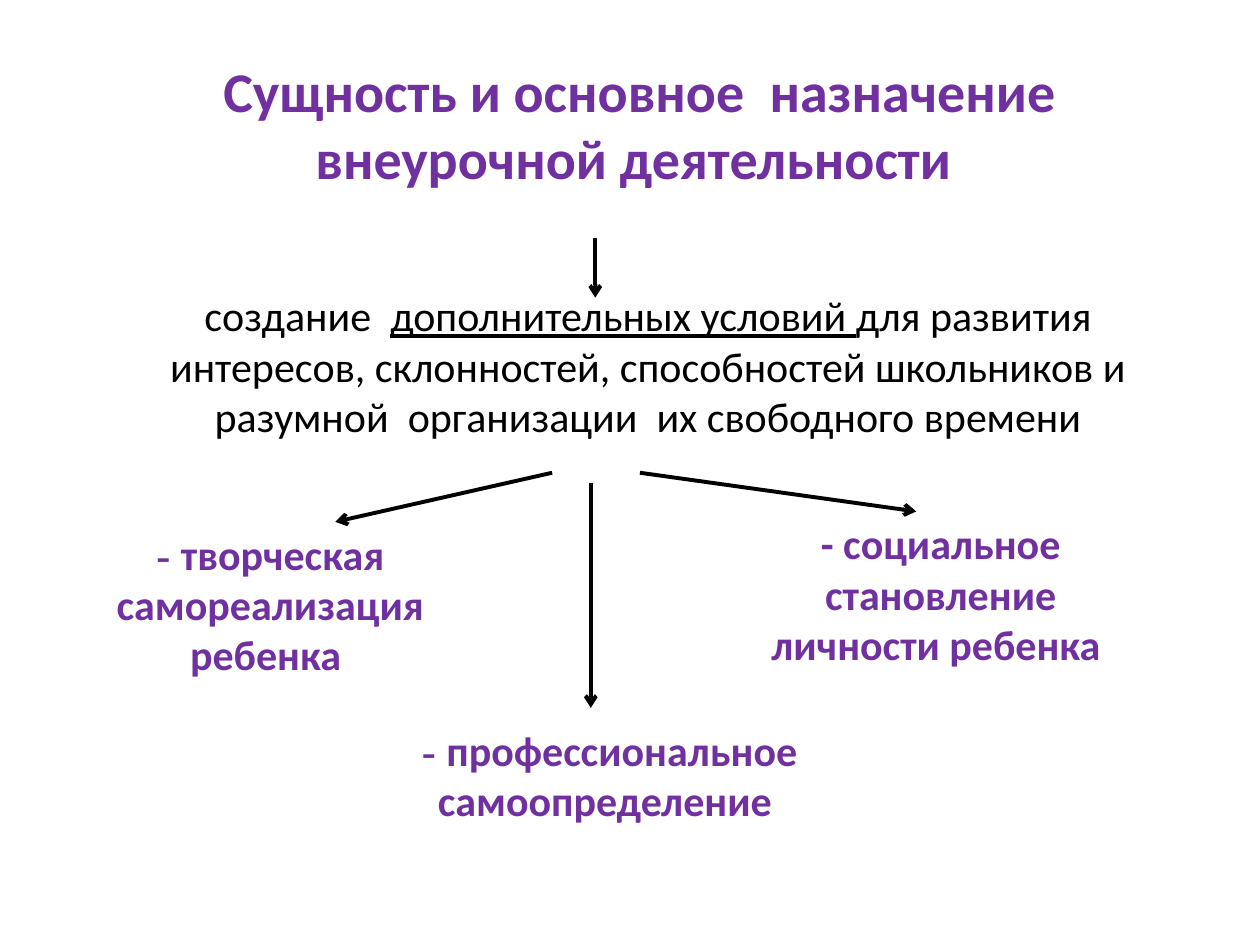
from lxml.etree import SubElement
from pptx import Presentation
from pptx.dml.color import RGBColor
from pptx.enum.shapes import MSO_CONNECTOR
from pptx.enum.text import MSO_ANCHOR, PP_ALIGN
from pptx.oxml.ns import qn
from pptx.util import Cm, Pt

PURPLE = RGBColor(0x70, 0x30, 0xA0)
BLACK = RGBColor(0, 0, 0)


def add_run(p, text, size, color, bold=False, underline=False, font="Calibri"):
    r = p.add_run()
    r.text = text
    r.font.name = font
    r.font.size = Pt(size)
    r.font.bold = bold
    r.font.underline = underline
    r.font.color.rgb = color


def add_centered_box(left, top, width, height):
    """Add a wrapping text box and return its centred first paragraph."""
    tf = s.shapes.add_textbox(Cm(left), Cm(top), Cm(width), Cm(height)).text_frame
    tf.word_wrap = True
    p = tf.paragraphs[0]
    p.alignment = PP_ALIGN.CENTER
    return p


prs = Presentation()
prs.slide_width, prs.slide_height = Cm(25.4), Cm(19.05)
s = prs.slides.add_slide(prs.slide_layouts[5])

# Title
title = s.shapes.title
title.left, title.top, title.width, title.height = Cm(1.47), Cm(0.93), Cm(22.86), Cm(3.12)
tf = title.text_frame
tf.vertical_anchor = MSO_ANCHOR.MIDDLE
p = tf.paragraphs[0]
p.alignment = PP_ALIGN.CENTER
add_run(p, "Сущность и основное  назначение внеурочной деятельности ", 32, PURPLE, bold=True)

# Main purpose
p = add_centered_box(1.85, 5.72, 22.43, 3.33)
add_run(p, "создание  ", 24, BLACK)
add_run(p, "дополнительных условий ", 24, BLACK, underline=True)
add_run(p, "для развития интересов, склонностей, способностей школьников "
           "и разумной  организации  их свободного времени", 24, BLACK)

# Three outcomes
outcomes = [
    (1.78, 10.52, 7.34, 3.33, "творческая самореализация ребенка ", "Times New Roman"),
    (5.94, 14.48, 12.7, 2.31, "профессиональное самоопределение ", "Times New Roman"),
    (15.09, 10.31, 7.75, 3.33, "социальное становление личности ребенка ", "Calibri"),
]
for left, top, width, height, text, dash_font in outcomes:
    p = add_centered_box(left, top, width, height)
    add_run(p, "- ", 24, PURPLE, bold=True, font=dash_font)
    add_run(p, text, 24, PURPLE, bold=True)

# Arrows: from title to purpose, then from purpose to each outcome
arrows = [
    (12, 4.8, 12, 6),
    (11.13, 9.53, 6.76, 10.52),
    (11.91, 9.73, 11.91, 14.27),
    (12.9, 9.53, 18.47, 10.31),
]
for x1, y1, x2, y2 in arrows:
    arrow = s.shapes.add_connector(MSO_CONNECTOR.STRAIGHT, Cm(x1), Cm(y1), Cm(x2), Cm(y2))
    arrow.line.color.rgb = BLACK
    arrow.line.width = Pt(2.25)
    SubElement(arrow.line._get_or_add_ln(), qn("a:tailEnd"), type="arrow")
    SubElement(arrow._element.spPr, qn("a:effectLst"))

prs.save("out.pptx")
